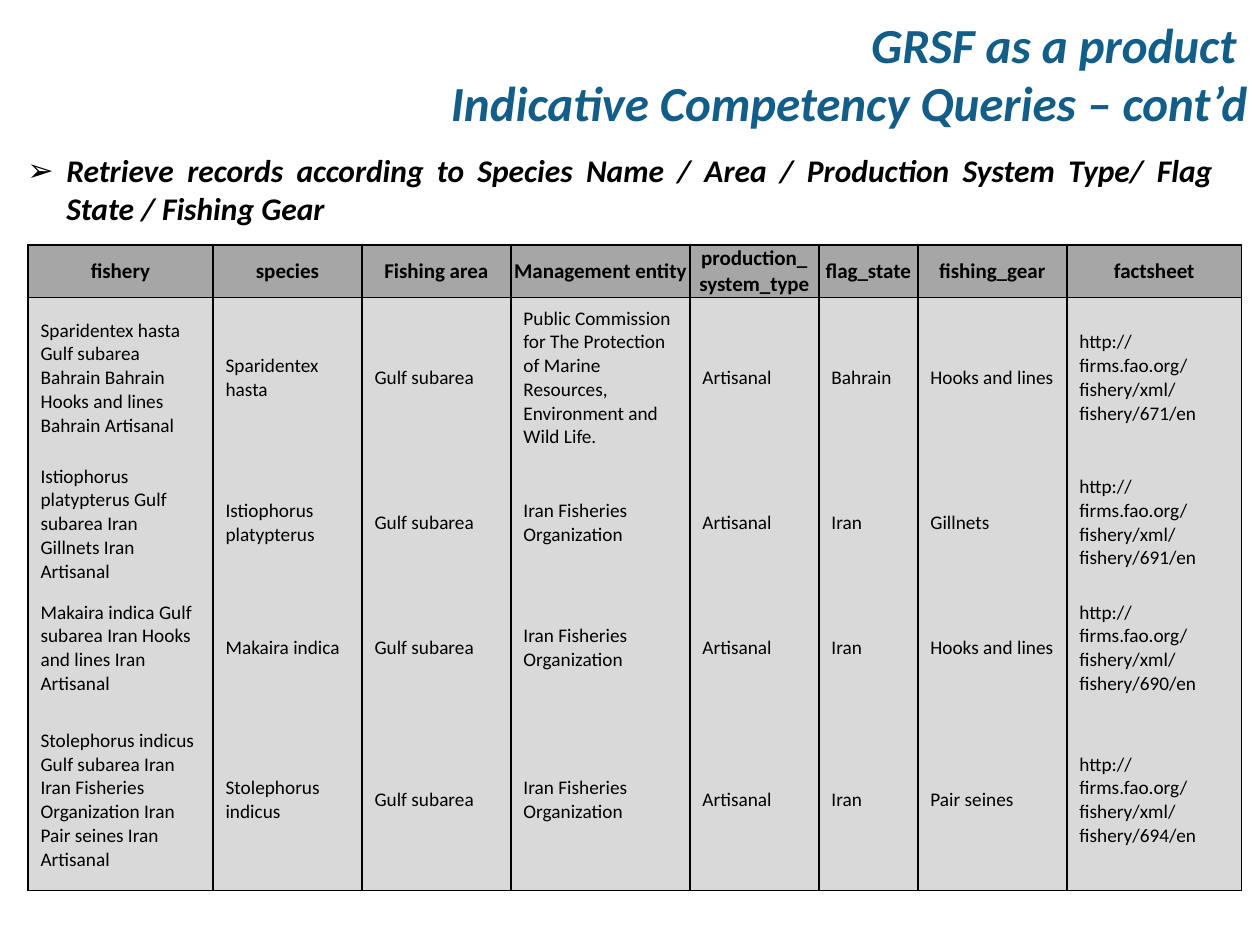
"""Build the slide of indicative competency queries with its table of fishery records."""
import dataclasses

import lxml.etree
import pptx
import pptx.dml.color
import pptx.enum.text
import pptx.oxml.ns
import pptx.util

ALIGN = pptx.enum.text.PP_ALIGN
MIDDLE = pptx.enum.text.MSO_ANCHOR.MIDDLE
PX = 914400 // 126


@dataclasses.dataclass(frozen=True)
class Theme:
    font: str = "Calibri"
    title: str = "125E89"
    ink: str = "000000"
    header_fill: str = "A6A6A6"
    body_fill: str = "D9D9D9"
    title_size: int = 28
    query_size: int = 18
    header_size: int = 12
    body_size: int = 11
    border: int = 1


def px(n):
    return pptx.util.Emu(n * PX)


def rgb(color):
    return pptx.dml.color.RGBColor.from_string(color)


def sub(parent, tag, **attrs):
    return lxml.etree.SubElement(parent, pptx.oxml.ns.qn(tag), **attrs)


class Deck:
    def __init__(self, theme, width, height):
        self.theme = theme
        self.prs = pptx.Presentation()
        self.prs.slide_width, self.prs.slide_height = px(width), px(height)
        self.s = self.prs.slides.add_slide(self.prs.slide_layouts[5])

    def format(self, p, size, color, align, bold=False, italic=False):
        p.alignment = align
        for r in p.runs:
            r.font.name = self.theme.font
            r.font.size = pptx.util.Pt(size)
            r.font.bold, r.font.italic = bold, italic
            r.font.color.rgb = rgb(color)

    def title(self, text, x, y, w, h):
        sp = self.s.shapes.title
        sp.left, sp.top, sp.width, sp.height = map(px, (x, y, w, h))
        tf = sp.text_frame
        tf.auto_size = pptx.enum.text.MSO_AUTO_SIZE.NONE
        tf.vertical_anchor = MIDDLE
        p = tf.paragraphs[0]
        p.text = text
        self.format(p, self.theme.title_size, self.theme.title, ALIGN.RIGHT, True, True)

    def bullet(self, text, x, y, w, h, indent):
        tf = self.s.shapes.add_textbox(*map(px, (x, y, w, h))).text_frame
        tf.word_wrap = True
        p = tf.paragraphs[0]
        pPr = p._p.get_or_add_pPr()
        pPr.set("marL", str(px(indent)))
        pPr.set("indent", str(-px(indent)))
        sub(pPr, "a:buFont", typeface="Arial")
        sub(pPr, "a:buChar", char="➢")
        p.text = text
        self.format(p, self.theme.query_size, self.theme.ink, ALIGN.JUSTIFY, True, True)

    def borders(self, cell, sides):
        tcPr = cell._tc.get_or_add_tcPr()
        for side in "LRTB":
            ln = sub(tcPr, f"a:ln{side}", w=str(pptx.util.Pt(self.theme.border)))
            if side in sides:
                sub(sub(ln, "a:solidFill"), "a:srgbClr", val=self.theme.ink)
            else:
                sub(ln, "a:noFill")

    def cell(self, cell, text, sides, header):
        theme = self.theme
        self.borders(cell, sides)
        cell.fill.solid()
        cell.fill.fore_color.rgb = rgb(theme.header_fill if header else theme.body_fill)
        cell.vertical_anchor = MIDDLE
        if header:
            cell.margin_left = cell.margin_right = px(1)
            cell.margin_top = cell.margin_bottom = px(1)
        cell.text_frame.text = text
        size = theme.header_size if header else theme.body_size
        align = ALIGN.CENTER if header else ALIGN.LEFT
        for p in cell.text_frame.paragraphs:
            self.format(p, size, theme.ink, align, bold=header)

    def table(self, rows, x, y, widths, heights):
        box = map(px, (x, y, sum(widths), sum(heights)))
        tbl = self.s.shapes.add_table(len(rows), len(widths), *box).table
        tbl.first_row = tbl.horz_banding = False
        for col, width in zip(tbl.columns, widths):
            col.width = px(width)
        for row, height in zip(tbl.rows, heights):
            row.height = px(height)
        for i, row in enumerate(rows):
            top = "T" if i < 2 else ""
            bottom = "B" if i in (0, len(rows) - 1) else ""
            for j, text in enumerate(row):
                self.cell(tbl.cell(i, j), text, "LR" + top + bottom, i == 0)


HEADER = ["fishery", "species", "Fishing area", "Management entity",
          "production_\nsystem_type", "flag_state", "fishing_gear", "factsheet"]
IRAN_ENTITY = "Iran Fisheries Organization"
RECORDS = [
    ("Sparidentex hasta Gulf subarea Bahrain Bahrain Hooks and lines Bahrain Artisanal",
     "Sparidentex hasta",
     "Public Commission for The Protection of Marine Resources, Environment and Wild Life.",
     "Bahrain", "Hooks and lines", 671),
    ("Istiophorus platypterus Gulf subarea Iran Gillnets Iran Artisanal",
     "Istiophorus platypterus", IRAN_ENTITY, "Iran", "Gillnets", 691),
    ("Makaira indica Gulf subarea Iran Hooks and lines Iran Artisanal",
     "Makaira indica", IRAN_ENTITY, "Iran", "Hooks and lines", 690),
    ("Stolephorus indicus Gulf subarea Iran Iran Fisheries Organization Iran "
     "Pair seines Iran Artisanal",
     "Stolephorus indicus", IRAN_ENTITY, "Iran", "Pair seines", 694),
]


def main():
    deck = Deck(Theme(), 1260, 945)
    deck.title("GRSF as a product \nIndicative Competency Queries – cont’d", 357, -5, 903, 156)
    deck.bullet("Retrieve records according to Species Name / Area / Production System Type/ "
                "Flag State / Fishing Gear", 15, 145, 1211, 157, indent=39)
    rows = [HEADER] + [
        [fishery, species, "Gulf subarea", entity, "Artisanal", flag, gear,
         f"http://firms.fao.org/fishery/xml/fishery/{number}/en"]
        for fishery, species, entity, flag, gear, number in RECORDS
    ]
    deck.table(rows, 28, 245, widths=[185, 149, 149, 179, 129, 99, 149, 175],
               heights=[47, 161, 123, 123, 181])
    deck.prs.save("out.pptx")


if __name__ == "__main__":
    main()
